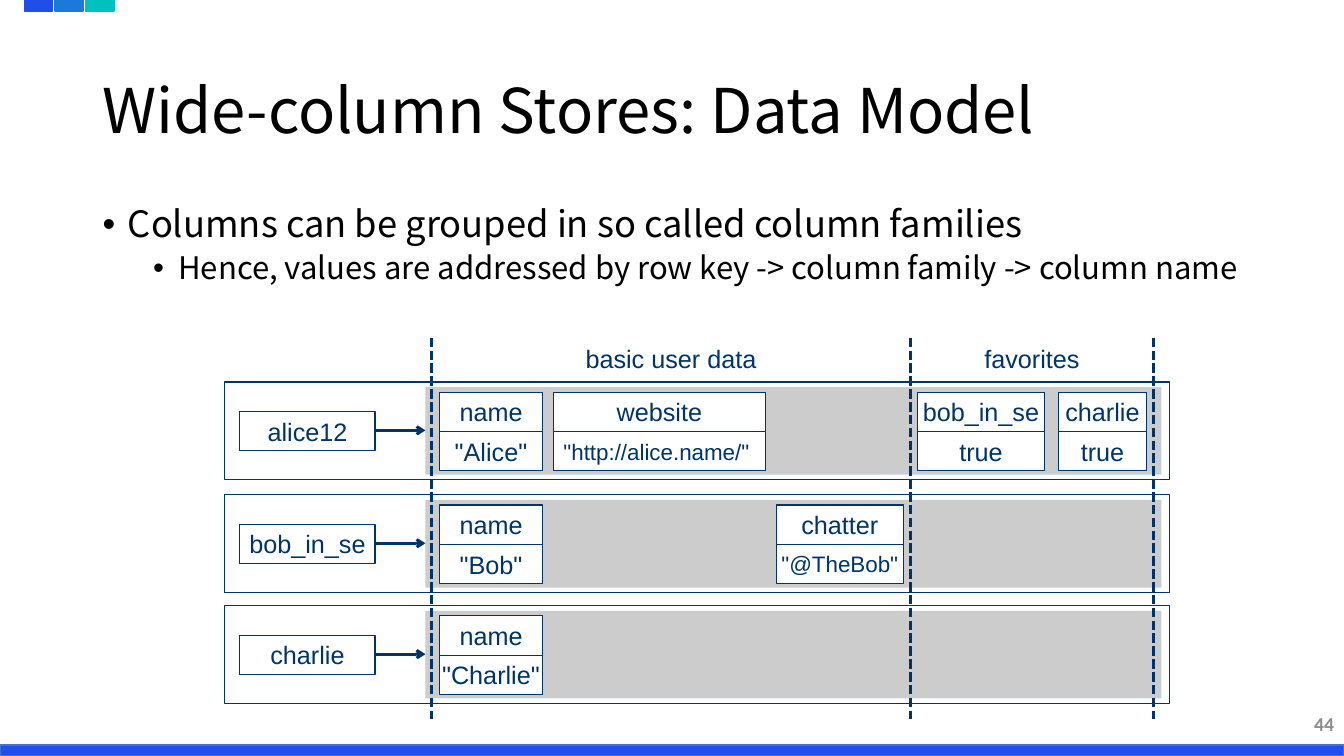
from lxml import etree
from pptx import Presentation
from pptx.dml.color import RGBColor
from pptx.enum.dml import MSO_LINE
from pptx.enum.shapes import MSO_CONNECTOR, MSO_SHAPE
from pptx.enum.text import MSO_ANCHOR, PP_ALIGN
from pptx.oxml.ns import qn
from pptx.util import Inches, Pt

COLORS = {
    "blue": "1F4EE9", "sky": "1B7AD9", "teal": "00C0C0", "edge": "4472C4",
    "navy": "003366", "gray": "CCCCCC", "white": "FFFFFF",
    "black": "000000", "number": "8C8C8C",
}
HEADING_FONT = "Noto Sans CJK KR"
CELL_HEIGHT = 0.39

# Left edge and width of each stored column
COLUMNS = {
    "name": (4.36, 1.02), "website": (5.49, 2.1), "chatter": (7.7, 1.26),
    "bob_in_se": (9.1, 1.26), "charlie": (10.5, 0.87),
}
# Row key, top edge, stored values
ROWS = [
    ("alice12", 3.79, {"name": '"Alice"', "website": '"http://alice.name/"',
                       "bob_in_se": "true", "charlie": "true"}),
    ("bob_in_se", 4.91, {"name": '"Bob"', "chatter": '"@TheBob"'}),
    ("charlie", 6.01, {"name": '"Charlie"'}),
]
SMALL_VALUES = ("website", "chatter")
FAMILY_EDGES = (4.28, 9.03, 11.44)
FAMILIES = ("basic user data", "favorites")


def rgb(name):
    return RGBColor.from_string(COLORS[name])


def write(paragraph, text, size=18, font="Arial", color="navy", bold=False,
          align=PP_ALIGN.CENTER, spacing=None):
    paragraph.alignment = align
    paragraph.line_spacing = spacing
    run = paragraph.add_run()
    run.text = text
    run.font.size = Pt(size)
    run.font.name = font
    run.font.bold = bold
    run.font.color.rgb = rgb(color)


def add_box(shapes, left, top, width, height, fill=None, line=None,
            weight=0, text=None, **style):
    box = shapes.add_shape(MSO_SHAPE.RECTANGLE, Inches(left), Inches(top),
                           Inches(width), Inches(height))
    box.shadow.inherit = False
    if fill:
        box.fill.solid()
        box.fill.fore_color.rgb = rgb(fill)
    else:
        box.fill.background()
    if line:
        box.line.color.rgb = rgb(line)
        box.line.width = Pt(weight)
    else:
        box.line.fill.background()
    if text:
        box.text_frame.word_wrap = False
        box.text_frame.vertical_anchor = MSO_ANCHOR.MIDDLE
        write(box.text_frame.paragraphs[0], text, **style)


def add_frame(shapes, left, top, width, height, anchor=MSO_ANCHOR.TOP, wrap=True):
    frame = shapes.add_textbox(Inches(left), Inches(top), Inches(width),
                               Inches(height)).text_frame
    frame.word_wrap = wrap
    frame.vertical_anchor = anchor
    return frame


def add_line(shapes, x1, y1, x2, y2, weight=0, dash=None, arrow=False):
    line = shapes.add_connector(MSO_CONNECTOR.STRAIGHT, Inches(x1), Inches(y1),
                                Inches(x2), Inches(y2))
    line.line.color.rgb = rgb("navy")
    line.line.width = Pt(weight)
    if dash:
        line.line.dash_style = dash
    properties = line._element.spPr
    if arrow:
        etree.SubElement(properties.find(qn("a:ln")), qn("a:tailEnd"), type="arrow")
    etree.SubElement(properties, qn("a:effectLst"))


def add_bullet(paragraph, text, margin, **style):
    properties = paragraph._p.get_or_add_pPr()
    properties.set("marL", str(Inches(margin)))
    properties.set("indent", str(Inches(-0.25)))
    etree.SubElement(properties, qn("a:buFont"), typeface="Arial")
    etree.SubElement(properties, qn("a:buChar"), char="•")
    write(paragraph, text, font=HEADING_FONT, color="black",
          align=PP_ALIGN.LEFT, spacing=0.9, **style)


def add_row(slide, key, top, values):
    shapes = slide.shapes.add_group_shape().shapes
    add_box(shapes, 2.38, top + 0.29, 1.34, CELL_HEIGHT, line="navy", text=key)
    add_box(shapes, 4.22, top + 0.05, 7.3, 0.87, fill="gray")
    add_line(shapes, 3.72, top + 0.48, 4.22, top + 0.48, arrow=True)
    for column, value in values.items():
        left, width = COLUMNS[column]
        value_size = 16 if column in SMALL_VALUES else 18
        value_align = PP_ALIGN.LEFT if column == "website" else PP_ALIGN.CENTER
        add_box(shapes, left, top + 0.1, width, CELL_HEIGHT, fill="white",
                line="navy", text=column)
        add_box(shapes, left, top + 0.1 + CELL_HEIGHT, width, CELL_HEIGHT,
                fill="white", line="navy", text=value, size=value_size,
                align=value_align)
    add_box(shapes, 2.23, top, 9.37, 0.97, line="navy")


def main():
    prs = Presentation()
    prs.slide_width, prs.slide_height = Inches(13.33), Inches(7.5)
    slide = prs.slides.add_slide(prs.slide_layouts[6])
    shapes = slide.shapes

    # Footer bar and corner tabs
    add_box(shapes, 0, 7.39, 13.33, 0.11, fill="blue", line="edge", weight=1)
    for i, color in enumerate(("blue", "sky", "teal")):
        add_box(shapes, 0.24 + 0.305 * i, 0, 0.28, 0.11, fill=color,
                line=color, weight=1)

    # Title, bullets and slide number
    title = add_frame(shapes, 0.92, 0.4, 11.5, 1.45, MSO_ANCHOR.MIDDLE)
    write(title.paragraphs[0], "Wide-column Stores: Data Model", size=44,
          font=HEADING_FONT, color="black", align=PP_ALIGN.LEFT, spacing=0.9)
    body = add_frame(shapes, 0.92, 2, 11.86, 1.1)
    add_bullet(body.paragraphs[0],
               "Columns can be grouped in so called column families",
               0.25, size=25.9)
    detail = body.add_paragraph()
    detail.level = 1
    detail.space_before = Pt(5)
    add_bullet(detail, "Hence, values are addressed by row key -> "
               "column family -> column name", 0.75, size=22.2)
    number = add_frame(shapes, 10.33, 6.98, 3, 0.4, MSO_ANCHOR.MIDDLE)
    write(number.paragraphs[0], "44", size=14, font="Calibri", color="number",
          bold=True, align=PP_ALIGN.RIGHT)

    # Rows of the store
    for key, top, values in ROWS:
        add_row(slide, key, top, values)

    # Column families
    for x in FAMILY_EDGES:
        add_line(shapes, x, 3.35, x, 7.13, weight=2.3, dash=MSO_LINE.SQUARE_DOT)
    for family, left, right in zip(FAMILIES, FAMILY_EDGES, FAMILY_EDGES[1:]):
        label = add_frame(shapes, left, 3.36, right - left, 0.38, wrap=False)
        write(label.paragraphs[0], family)

    prs.save("out.pptx")


if __name__ == "__main__":
    main()
